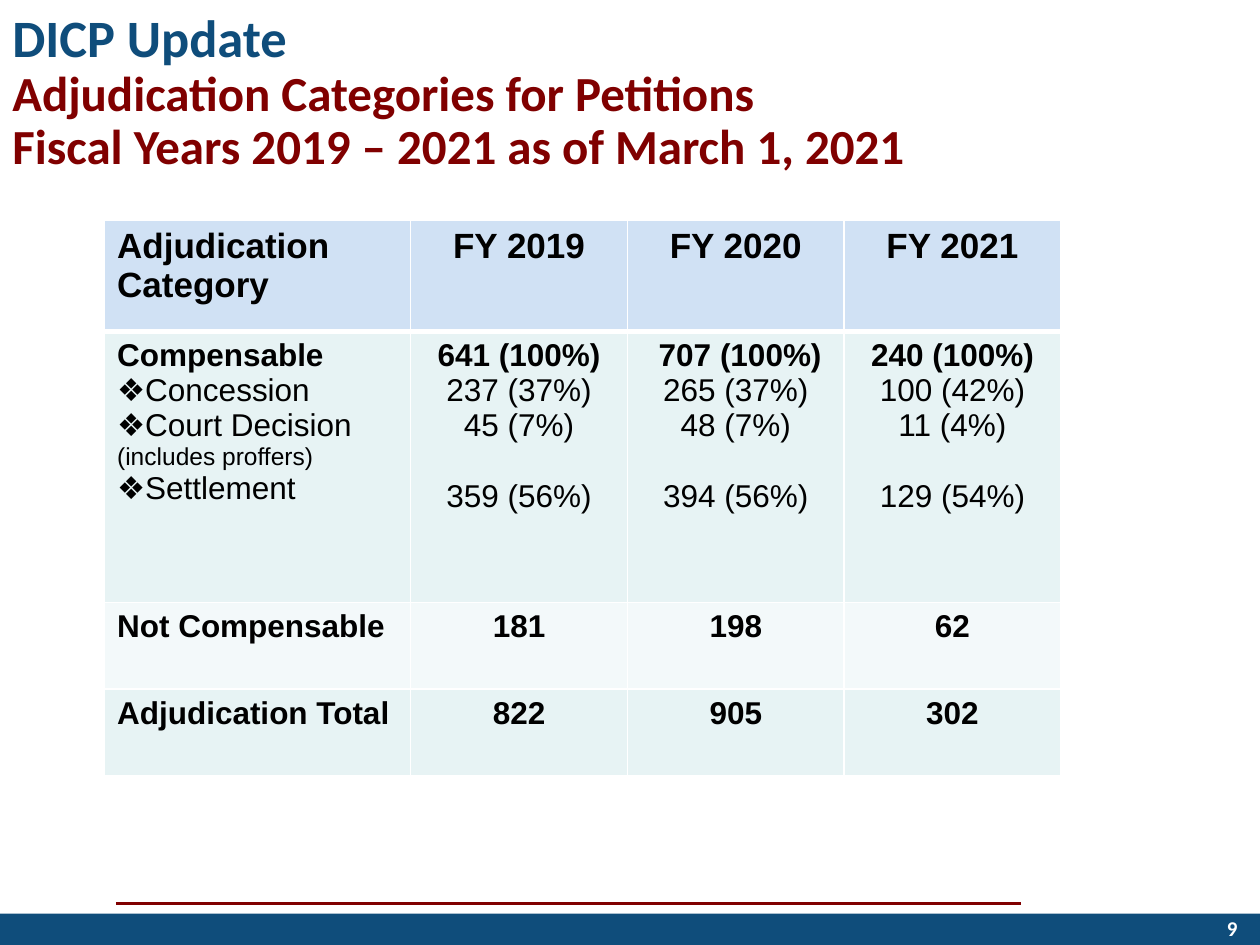
from lxml.etree import SubElement
from pptx import Presentation
from pptx.dml.color import RGBColor
from pptx.enum.shapes import MSO_CONNECTOR, MSO_SHAPE
from pptx.enum.text import MSO_ANCHOR, PP_ALIGN
from pptx.oxml.ns import qn
from pptx.util import Inches, Pt

NAVY = RGBColor(0x0F, 0x4D, 0x7B)
MAROON = RGBColor(0x80, 0x00, 0x00)
WHITE = RGBColor(0xFF, 0xFF, 0xFF)
BLACK = RGBColor(0x00, 0x00, 0x00)
HEADER = RGBColor(0xD0, 0xE1, 0xF4)
BAND = RGBColor(0xE7, 0xF3, 0xF4)
PALE = RGBColor(0xF3, 0xF9, 0xFA)


def style(font, name, size, color, bold=True):
    font.name, font.size, font.bold = name, Pt(size), bold
    font.color.rgb = color


def add_border(cell, side, width):
    ln = SubElement(cell._tc.get_or_add_tcPr(), qn(f"a:ln{side}"), w=str(Pt(width)))
    SubElement(SubElement(ln, qn("a:solidFill")), qn("a:srgbClr"), val=str(WHITE))


prs = Presentation()
prs.slide_width, prs.slide_height = Inches(10), Inches(7.5)
s = prs.slides.add_slide(prs.slide_layouts[6])

rule = s.shapes.add_connector(
    MSO_CONNECTOR.STRAIGHT, Inches(0.92), Inches(7.17), Inches(8.1), Inches(7.17))
rule.line.color.rgb = MAROON
rule.line.width = Pt(1.5)
SubElement(rule._element.spPr, qn("a:effectLst"))

footer = s.shapes.add_shape(
    MSO_SHAPE.RECTANGLE, 0, Inches(7.25), prs.slide_width, Inches(0.25))
footer.shadow.inherit = False
footer.fill.solid()
footer.fill.fore_color.rgb = NAVY
footer.line.fill.background()

title = s.shapes.add_textbox(0, Inches(0.02), Inches(9.92), Inches(1.45))
tf = title.text_frame
tf.word_wrap = True
tf.vertical_anchor = MSO_ANCHOR.MIDDLE
p = tf.paragraphs[0]
p.line_spacing = 0.9
p.text = ("DICP Update\vAdjudication Categories for Petitions\v"
          "Fiscal Years 2019 – 2021 as of March 1, 2021")
for r, size, color in zip(p.runs, (30, 28, 28), (NAVY, MAROON, MAROON)):
    style(r.font, "Calibri", size, color)

rows = [
    ["Adjudication\nCategory", "FY 2019", "FY 2020", "FY 2021"],
    ["Compensable\nConcession\nCourt Decision\n(includes proffers)\nSettlement",
     "641 (100%)\n237 (37%)\n45 (7%)\n359 (56%)",
     " 707 (100%)\n265 (37%)\n48 (7%)\n394 (56%)",
     "240 (100%)\n100 (42%)\n11 (4%)\n129 (54%)"],
    ["Not Compensable", "181", "198", "62"],
    ["Adjudication Total", "822", "905", "302"],
]
bulleted = ("Concession", "Court Decision", "Settlement")
col_widths = (2.43, 1.72, 1.72, 1.72)
row_heights = (0.88, 2.15, 0.69, 0.69)
row_fills = (HEADER, BAND, PALE, BAND)

table = s.shapes.add_table(
    len(rows), len(col_widths), Inches(0.83), Inches(1.75),
    Inches(sum(col_widths)), Inches(sum(row_heights))).table
for col, width in zip(table.columns, col_widths):
    col.width = Inches(width)
for row, height in zip(table.rows, row_heights):
    row.height = Inches(height)

for i, texts in enumerate(rows):
    for j, text in enumerate(texts):
        cell = table.cell(i, j)
        for side in "LRTB":
            header_edge = (i, side) in ((0, "B"), (1, "T"))
            add_border(cell, side, 3 if header_edge else 1)
        cell.fill.solid()
        cell.fill.fore_color.rgb = row_fills[i]
        cell.text_frame.text = text
        for k, p in enumerate(cell.text_frame.paragraphs):
            if p.text in bulleted:
                pPr = p._p.get_or_add_pPr()
                pPr.set("marL", "0")
                pPr.set("indent", "0")
                SubElement(pPr, qn("a:buFont"), typeface="Arial")
                SubElement(pPr, qn("a:buChar"), char="❖")
            p.alignment = PP_ALIGN.CENTER if j else PP_ALIGN.LEFT
            if j and k == 3:
                p.space_before = Pt(20)
            size = 20 if i == 0 else 14 if p.text.startswith("(") else 18
            style(p.runs[0].font, "Arial", size, BLACK, bold=i != 1 or k == 0)

number = s.shapes.add_textbox(Inches(7.67), Inches(7.17), Inches(2.25), Inches(0.4))
tf = number.text_frame
tf.word_wrap = True
tf.vertical_anchor = MSO_ANCHOR.MIDDLE
tf.text = "9"
p = tf.paragraphs[0]
p.alignment = PP_ALIGN.RIGHT
style(p.runs[0].font, "Calibri", 12, WHITE)

prs.save("out.pptx")
